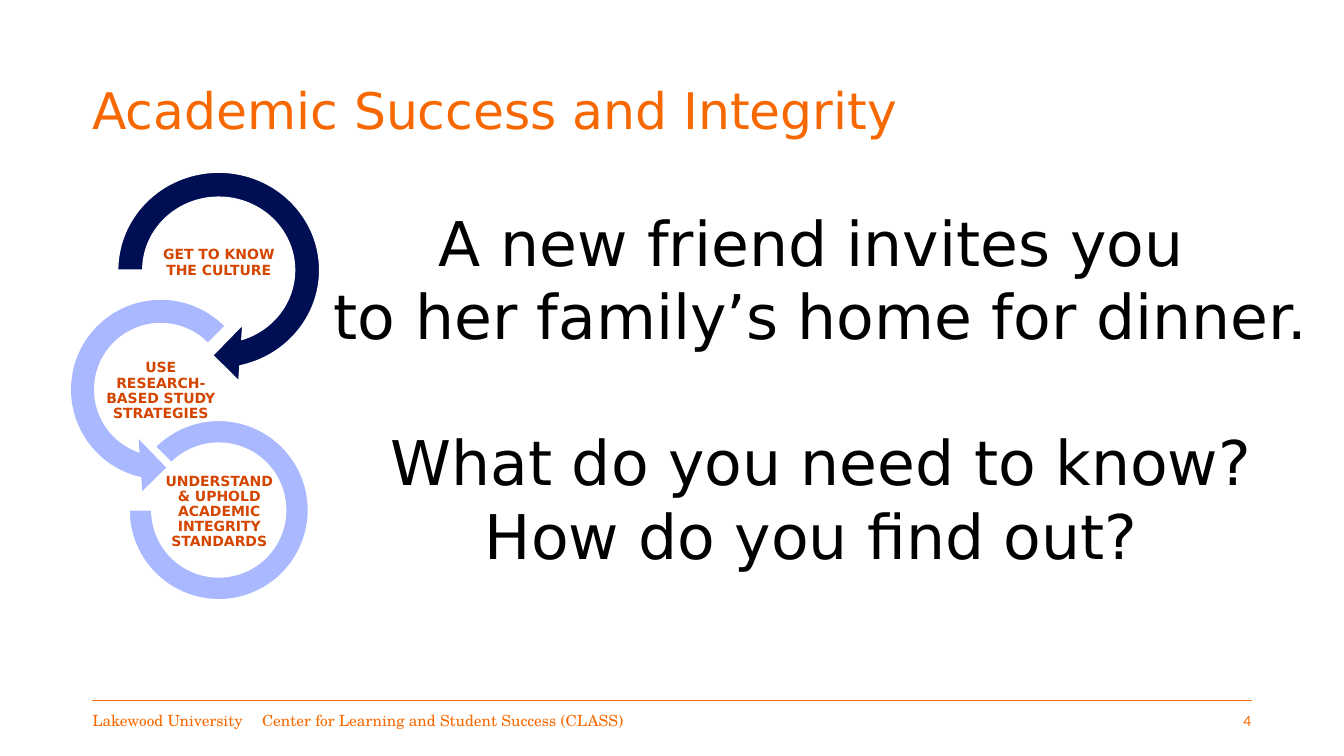
from lxml import etree
from pptx import Presentation
from pptx.dml.color import RGBColor
from pptx.enum.shapes import MSO_CONNECTOR, MSO_SHAPE
from pptx.enum.text import MSO_ANCHOR, MSO_AUTO_SIZE, PP_ALIGN
from pptx.oxml.ns import qn
from pptx.util import Inches, Pt

LEFT, CENTER, RIGHT = PP_ALIGN.LEFT, PP_ALIGN.CENTER, PP_ALIGN.RIGHT
TOP, MIDDLE = MSO_ANCHOR.TOP, MSO_ANCHOR.MIDDLE
NO_AUTOFIT = MSO_AUTO_SIZE.NONE
STRAIGHT = MSO_CONNECTOR.STRAIGHT
ARROW, LEFT_ARROW, ARC = (MSO_SHAPE.CIRCULAR_ARROW,
                          MSO_SHAPE.LEFT_CIRCULAR_ARROW, MSO_SHAPE.BLOCK_ARC)

COLORS = {"orange": "F76900", "rust": "D44500", "navy": "000E54",
          "periwinkle": "AAB8FF", "white": "FFFFFF", "black": "000000"}
SANS, SERIF, NUMERAL = "DejaVu Sans", "TeX Gyre Schola", "Lato"


def color(name):
    return RGBColor.from_string(COLORS[name])


class Board:
    """One slide laid out on a grid of 160 columns by 90 rows."""
    COLS, ROWS = 160, 90

    def __init__(self, prs):
        self.cell_w = prs.slide_width / self.COLS
        self.cell_h = prs.slide_height / self.ROWS
        self.s = prs.slides.add_slide(prs.slide_layouts[5])

    def box(self, col, row, cols, rows):
        return (round(col * self.cell_w), round(row * self.cell_h),
                round(cols * self.cell_w), round(rows * self.cell_h))

    def set_text(self, sp, lines, size, font, ink, bold=False, align=LEFT,
                 anchor=MIDDLE, spacing=1.0, insets=(0, 0.05), wrap=True):
        tf = sp.text_frame
        side, edge = (Inches(i) for i in insets)
        frame = {"auto_size": NO_AUTOFIT, "word_wrap": wrap,
                 "vertical_anchor": anchor, "margin_left": side,
                 "margin_right": side, "margin_top": edge,
                 "margin_bottom": edge}
        for name, value in frame.items():
            setattr(tf, name, value)
        for i, line in enumerate(lines):
            p = tf.add_paragraph() if i else tf.paragraphs[0]
            p.alignment, p.line_spacing = align, spacing
            r = p.add_run()
            r.text = line
            style = {"size": Pt(size), "name": font, "bold": bold}
            for name, value in style.items():
                setattr(r.font, name, value)
            r.font.color.rgb = color(ink)
        return tf

    def title(self, place, text, **style):
        sp = self.s.shapes.title
        sp.left, sp.top, sp.width, sp.height = self.box(*place)
        return self.set_text(sp, [text], **style)

    def text(self, place, lines, **style):
        sp = self.s.shapes.add_textbox(*self.box(*place))
        return self.set_text(sp, lines, **style)

    def ring(self, kind, place, adjustments, fill, outline):
        sp = self.s.shapes.add_shape(kind, *self.box(*place))
        sp.shadow.inherit = False
        for i, value in enumerate(adjustments):
            sp.adjustments[i] = value
        sp.fill.solid()
        sp.fill.fore_color.rgb = color(fill)
        if outline:
            sp.line.color.rgb = color(outline)
            sp.line.width = Pt(1)
        else:
            sp.line.fill.background()

    def rule(self, col, row, cols, ink, width):
        x, y, w, _ = self.box(col, row, cols, 0)
        line = self.s.shapes.add_connector(STRAIGHT, x, y, x + w, y)
        line.line.color.rgb = color(ink)
        line.line.width = Pt(width)
        etree.SubElement(line._element.spPr, qn("a:effectLst"))

    def tab_stop(self, p, cols):
        tabs = etree.SubElement(p._p.get_or_add_pPr(), qn("a:tabLst"))
        etree.SubElement(tabs, qn("a:tab"), algn="l",
                         pos=str(round(cols * self.cell_w)))


def main():
    prs = Presentation()
    prs.slide_width, prs.slide_height = Inches(13.333), Inches(7.5)
    board = Board(prs)
    margin, content = 11, 138

    # Footer
    foot, foot_h = 83.4, 4.8
    board.rule(margin, foot, content, "orange", 0.5)
    tf = board.text((margin, foot, 70, foot_h),
                    ["Lakewood University\tCenter for Learning and "
                     "Student Success (CLASS)"],
                    size=11, font=SERIF, ink="orange")
    board.tab_stop(tf.paragraphs[0], 20.2)
    board.text((margin + content - 25, foot, 25, foot_h), ["4"],
               size=10, font=NUMERAL, ink="orange", align=RIGHT)

    # Title
    board.title((margin, 4.8, content, 17.4),
                "Academic Success and Integrity",
                size=36, font=SANS, ink="orange", spacing=0.9)

    # Chain of rings, each with its label
    steps = [
        (ARROW, (12.12, 18.6, 27.84, 27.12), (0.11, 11.42, 45, 108, 0.125),
         "navy", "white", (19.08, 24.36, 13.92, 13.92),
         "GET TO KNOW THE CULTURE"),
        (LEFT_ARROW, (6.72, 33.96, 24.84, 24.84),
         (0.11, 11.42, 63, 189, 0.125),
         "periwinkle", None, (12.24, 43.08, 13.8, 6.96),
         "USE RESEARCH-BASED STUDY STRATEGIES"),
        (ARC, (15.36, 50.04, 21.36, 21.36), (135, 108, 0.127),
         "periwinkle", "white", (19.2, 57.48, 13.8, 6.96),
         "UNDERSTAND & UPHOLD ACADEMIC INTEGRITY STANDARDS"),
    ]
    for kind, place, adjustments, fill, outline, label_place, label in steps:
        board.ring(kind, place, adjustments, fill, outline)
        board.text(label_place, [label], size=10, font=SANS, ink="rust",
                   bold=True, align=CENTER, spacing=0.9, insets=(0.01, 0.01))

    # Scenario and questions, one line height apart
    tf = board.text((37.92, 23.76, 119.76, 45.6),
                    ["A new friend invites you ",
                     "to her family’s home for dinner.",
                     "What do you need to know?",
                     "How do you find out? "],
                    size=44, font=SANS, ink="black", align=CENTER,
                    anchor=TOP, insets=(0.1, 0.05), wrap=False)
    tf.paragraphs[2].space_before = Pt(51.2)

    prs.save("out.pptx")


if __name__ == "__main__":
    main()
